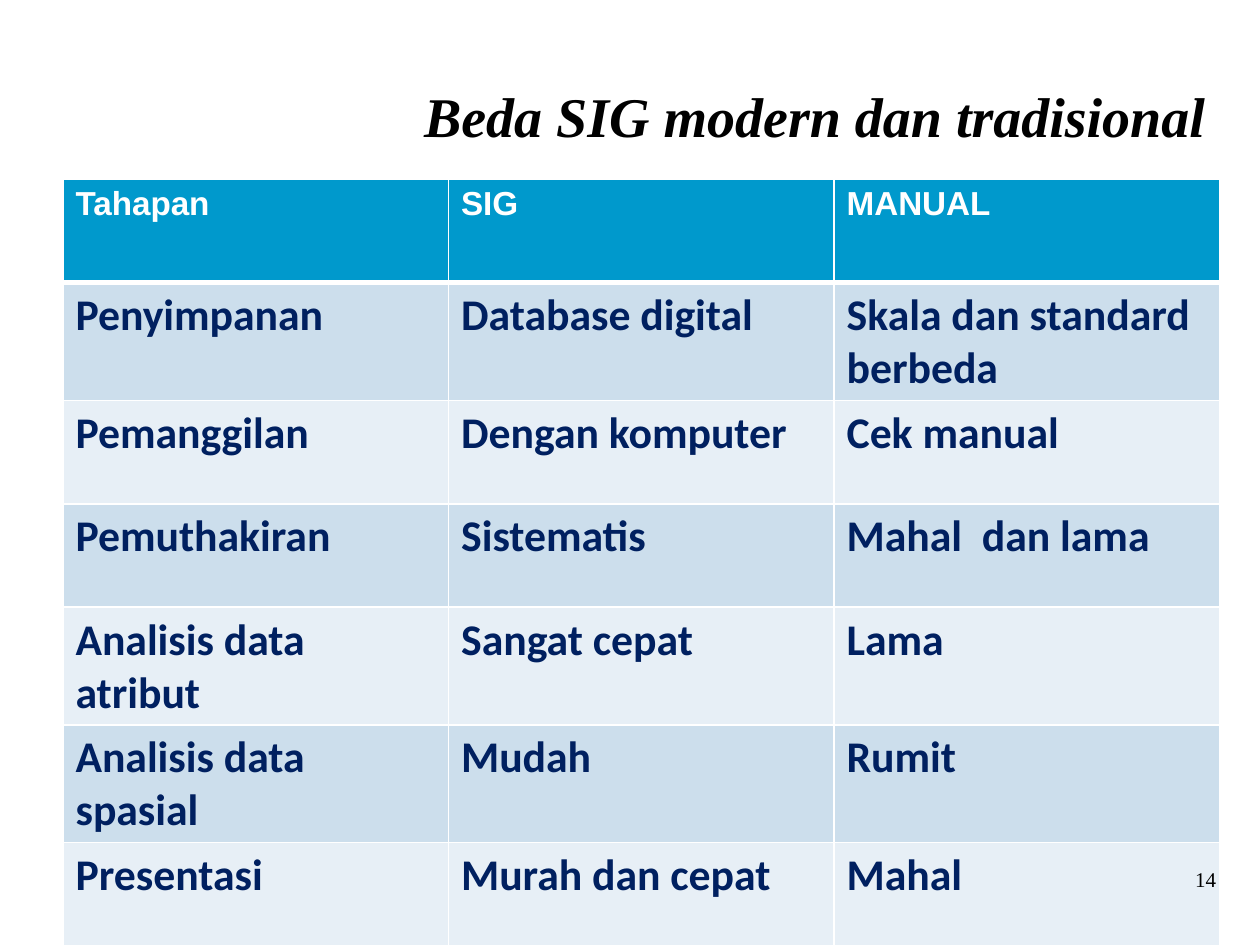
from lxml import etree
from pptx import Presentation
from pptx.dml.color import RGBColor
from pptx.enum.text import MSO_ANCHOR, PP_ALIGN
from pptx.oxml.ns import qn
from pptx.util import Inches, Pt

BLACK = RGBColor(0x00, 0x00, 0x00)
WHITE = RGBColor(0xFF, 0xFF, 0xFF)
NAVY = RGBColor(0x00, 0x20, 0x60)
HEADER_BLUE = RGBColor(0x00, 0x99, 0xCC)
BAND_DARK = RGBColor(0xCC, 0xDE, 0xEC)
BAND_LIGHT = RGBColor(0xE7, 0xEF, 0xF6)

COMPARISON = [
    ("Tahapan", "SIG", "MANUAL"),
    ("Penyimpanan", "Database digital", "Skala dan standard berbeda"),
    ("Pemanggilan", "Dengan komputer", "Cek manual"),
    ("Pemuthakiran", "Sistematis", "Mahal  dan lama"),
    ("Analisis data atribut", "Sangat cepat", "Lama"),
    ("Analisis data spasial", "Mudah", "Rumit"),
    ("Presentasi", "Murah dan cepat", "Mahal"),
]
HEADER_FONT = {"name": "Arial", "size": Pt(19), "bold": True}
BODY_FONT = {"name": "Calibri", "size": Pt(25), "bold": True}


def write(frame, text, color, font_format):
    paragraph = frame.paragraphs[0]
    run = paragraph.add_run()
    run.text = text
    run.font.color.rgb = color
    for attribute, value in font_format.items():
        setattr(run.font, attribute, value)
    return paragraph


def add_border(cell, side, width):
    """Draw a white line on one side (L, R, T or B); call before filling the cell."""
    properties = cell._tc.get_or_add_tcPr()
    line = etree.SubElement(properties, qn(f"a:ln{side}"), w=str(width))
    fill = etree.SubElement(line, qn("a:solidFill"))
    etree.SubElement(fill, qn("a:srgbClr"), val=str(WHITE))


prs = Presentation()
prs.slide_width, prs.slide_height = Inches(10), Inches(7.5)
slide = prs.slides.add_slide(prs.slide_layouts[6])

title = slide.shapes.add_textbox(
    Inches(1.75), Inches(0.5), Inches(7.92), Inches(0.83)).text_frame
title.word_wrap = True
title.vertical_anchor = MSO_ANCHOR.MIDDLE
title_font = {"name": "Times New Roman", "size": Pt(32), "bold": True, "italic": True}
write(title, "Beda SIG modern dan tradisional", BLACK, title_font).alignment = PP_ALIGN.RIGHT

table = slide.shapes.add_table(
    len(COMPARISON), 3, Inches(0.5), Inches(1.42), Inches(9.17), Inches(5.86)).table
for column in table.columns:
    column.width = Inches(3.06)
for row in table.rows:
    row.height = Inches(0.82)
table.rows[1].height = Inches(0.94)

for row_index, entries in enumerate(COMPARISON):
    is_header = row_index == 0
    if is_header:
        fill_color, text_color, font_format = HEADER_BLUE, WHITE, HEADER_FONT
    else:
        fill_color = BAND_DARK if row_index % 2 else BAND_LIGHT
        text_color, font_format = NAVY, BODY_FONT
    for column_index, entry in enumerate(entries):
        cell = table.cell(row_index, column_index)
        for side in "LRTB":
            thick = (is_header and side == "B") or (row_index == 1 and side == "T")
            add_border(cell, side, Pt(3 if thick else 1))
        cell.fill.solid()
        cell.fill.fore_color.rgb = fill_color
        write(cell.text_frame, entry, text_color, font_format)

page_number = slide.shapes.add_textbox(
    Inches(7.67), Inches(6.83), Inches(2.08), Inches(0.5)).text_frame
page_number.word_wrap = True
page_font = {"name": "Times New Roman", "size": Pt(12)}
write(page_number, "14", BLACK, page_font).alignment = PP_ALIGN.RIGHT

prs.save("out.pptx")
